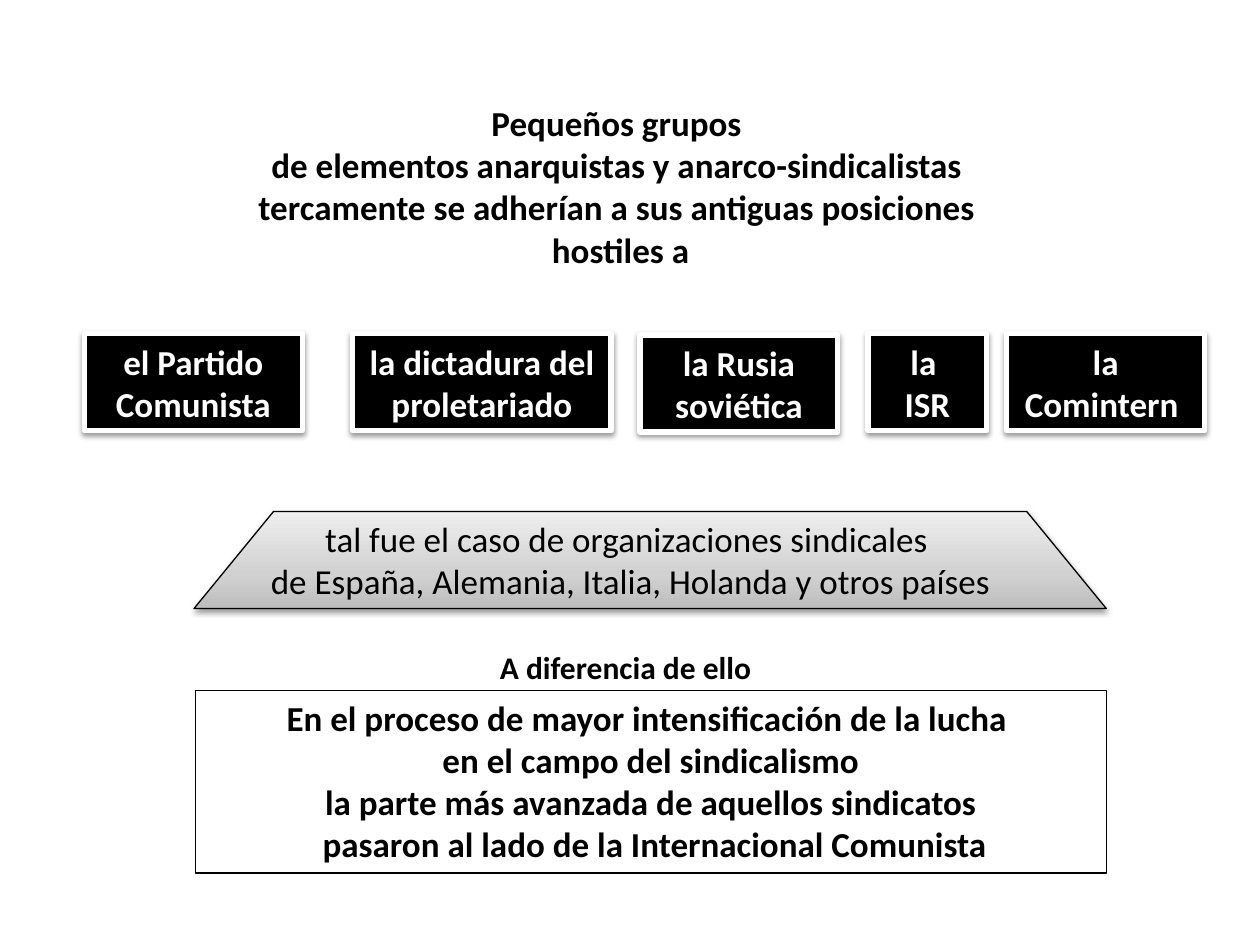
from copy import deepcopy
from typing import NamedTuple

from lxml.etree import SubElement
from pptx import Presentation
from pptx.dml.color import RGBColor
from pptx.enum.shapes import MSO_SHAPE
from pptx.enum.text import MSO_ANCHOR, MSO_AUTO_SIZE, PP_ALIGN
from pptx.oxml.ns import qn
from pptx.util import Inches, Pt

BLACK = RGBColor(0x00, 0x00, 0x00)
WHITE = RGBColor(0xFF, 0xFF, 0xFF)
GRAY_STOPS = [
    (0, RGBColor(0xBD, 0xBD, 0xBD)),
    (0.35, RGBColor(0xD1, 0xD1, 0xD1)),
    (1, RGBColor(0xEE, 0xEE, 0xEE)),
]
FONT = "Calibri"
TWO_LINES = 0.77


class Box(NamedTuple):
    left: float
    top: float
    width: float
    height: float

    def lengths(self):
        return [Inches(value) for value in self]


class Target(NamedTuple):
    """One thing the groups were hostile to."""
    left: float
    width: float
    lines: list[str]
    top: float = 2.65


TARGETS = [
    Target(0.67, 1.73, ["el Partido Comunista"]),
    Target(2.8, 2.05, ["la dictadura del proletariado"]),
    Target(5.08, 1.57, ["la Rusia soviética"], top=2.66),
    Target(6.89, 0.94, ["la ", "ISR"]),
    Target(7.99, 1.57, ["la Comintern "]),
]


def write_text(shape, lines: list[str], *, size: float = 20,
               bold: bool = True, color: RGBColor = BLACK) -> None:
    frame = shape.text_frame
    frame.word_wrap = True
    frame.auto_size = MSO_AUTO_SIZE.SHAPE_TO_FIT_TEXT
    frame.vertical_anchor = MSO_ANCHOR.TOP
    for index, line in enumerate(lines):
        paragraph = frame.add_paragraph() if index else frame.paragraphs[0]
        paragraph.alignment = PP_ALIGN.CENTER
        run = paragraph.add_run()
        run.text = line
        run.font.name = FONT
        run.font.size = Pt(size)
        run.font.bold = bold
        run.font.color.rgb = color


def add_outlined(slide, kind: MSO_SHAPE, box: Box, line: RGBColor, weight: float):
    shape = slide.shapes.add_shape(kind, *box.lengths())
    shape.fill.background()
    shape.line.color.rgb = line
    shape.line.width = Pt(weight)
    shape.shadow.inherit = False
    return shape


def add_label(slide, box: Box, lines: list[str], **text_format) -> None:
    write_text(slide.shapes.add_textbox(*box.lengths()), lines, **text_format)


def cast_shadow(shape) -> None:
    effects = shape._element.spPr.find(qn("a:effectLst"))
    shadow = SubElement(effects, qn("a:outerShdw"), blurRad=str(Pt(3.1)),
                        dist=str(Pt(1.6)), dir="5400000", rotWithShape="0")
    tint = SubElement(shadow, qn("a:srgbClr"), val=str(BLACK))
    SubElement(tint, qn("a:alpha"), val="38000")


def fill_gradient(shape, stops: list[tuple[float, RGBColor]]) -> None:
    shape.fill.gradient()
    shape.fill.gradient_angle = 90
    stop_list = shape._element.spPr.find(qn("a:gradFill")).find(qn("a:gsLst"))
    while len(stop_list) < len(stops):
        stop_list.append(deepcopy(stop_list[0]))
    for stop, (position, color) in zip(shape.fill.gradient_stops, stops):
        stop.position = position
        stop.color.rgb = color


def add_target(slide, target: Target) -> None:
    box = Box(target.left, target.top, target.width, TWO_LINES)
    shape = add_outlined(slide, MSO_SHAPE.RECTANGLE, box, WHITE, 3)
    shape.fill.solid()
    shape.fill.fore_color.rgb = BLACK
    cast_shadow(shape)
    write_text(shape, target.lines, color=WHITE)


def main() -> None:
    deck = Presentation()
    deck.slide_width, deck.slide_height = Inches(10), Inches(7.5)
    slide = deck.slides.add_slide(deck.slide_layouts[6])

    # Opening statement
    add_label(slide, Box(0.75, 0.76, 8.35, 1.45), [
        "Pequeños grupos ",
        "de elementos anarquistas y anarco-sindicalistas ",
        "tercamente se adherían a sus antiguas posiciones ",
        "hostiles a",
    ])

    # Row of targets
    for target in TARGETS:
        add_target(slide, target)

    # Countries, on a trapezoid
    base = add_outlined(slide, MSO_SHAPE.TRAPEZOID,
                        Box(1.54, 4.06, 7.24, TWO_LINES), BLACK, 0.75)
    base.adjustments[0] = 0.82
    fill_gradient(base, GRAY_STOPS)
    cast_shadow(base)
    add_label(slide, Box(0.83, 4.06, 8.35, TWO_LINES), [
        "tal fue el caso de organizaciones sindicales ",
        "de España, Alemania, Italia, Holanda y otros países",
    ], bold=False)

    # Contrast and outcome
    outcome = add_outlined(slide, MSO_SHAPE.RECTANGLE,
                           Box(1.55, 5.48, 7.23, 1.45), BLACK, 0.75)
    write_text(outcome, [
        "En el proceso de mayor intensificación de la lucha ",
        "en el campo del sindicalismo",
        "la parte más avanzada de aquellos sindicatos",
        " pasaron al lado de la Internacional Comunista",
    ])
    add_label(slide, Box(2.8, 5.09, 4.33, 0.4), ["A diferencia de ello"], size=18)

    deck.save("out.pptx")


if __name__ == "__main__":
    main()
